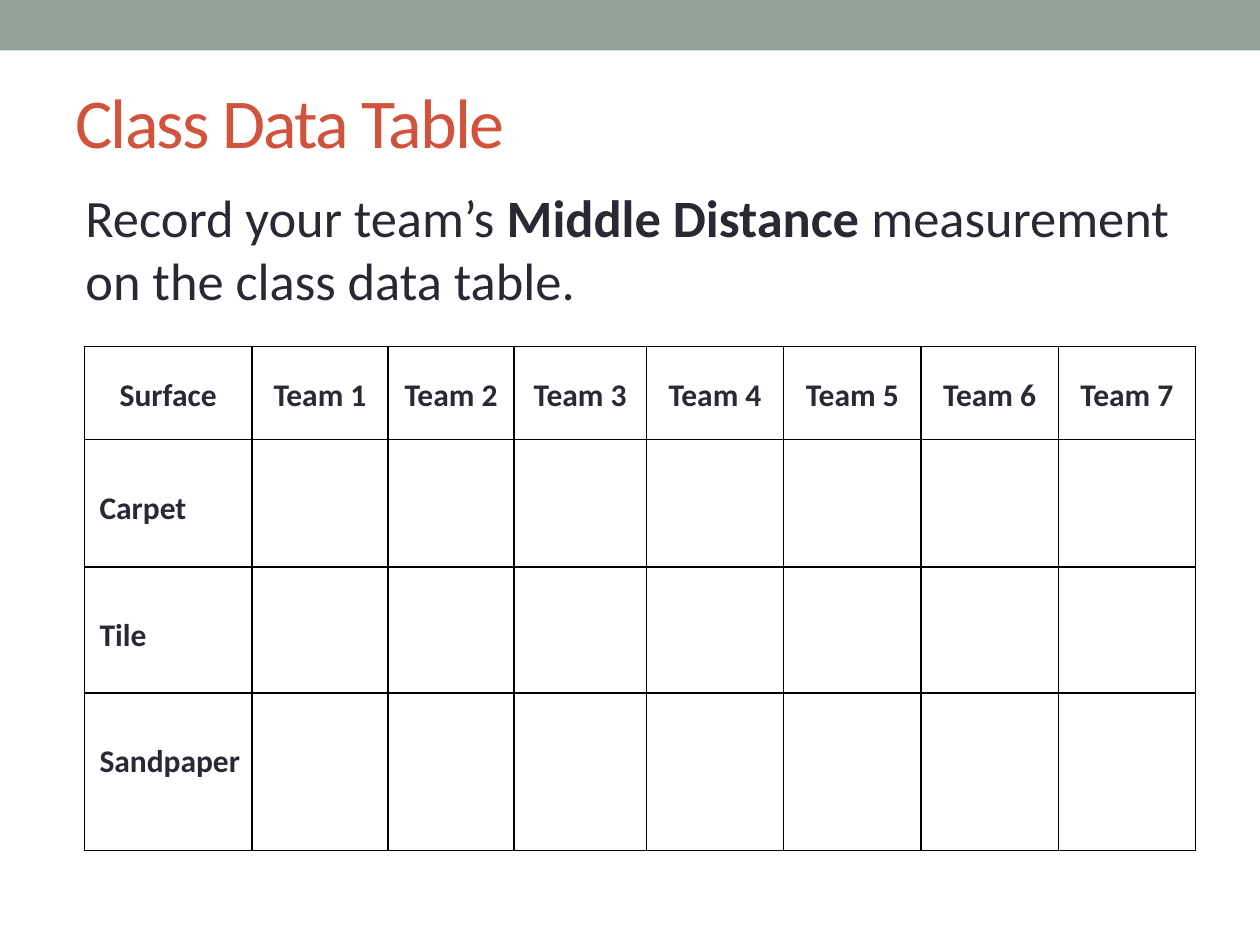
import pptx
import pptx.util
import pptx.dml.color
import pptx.enum.shapes
import pptx.enum.text
import pptx.oxml
import pptx.oxml.ns

Inches = pptx.util.Inches
Pt = pptx.util.Pt
RGBColor = pptx.dml.color.RGBColor
Anchor = pptx.enum.text.MSO_ANCHOR
Align = pptx.enum.text.PP_ALIGN

SAGE = RGBColor(0x93, 0xA2, 0x99)
RUST = RGBColor(0xD2, 0x53, 0x3C)
INK = RGBColor(0x29, 0x29, 0x34)
BLACK = RGBColor(0, 0, 0)


class Deck:
    font = "Calibri"

    def __init__(self, slide):
        self.slide = slide

    def style(self, para, size, color, bold=None):
        para.font.name = self.font
        para.font.size = Pt(size)
        para.font.color.rgb = color
        para.font.bold = bold

    def band(self, left, top, width, height, color):
        shape = self.slide.shapes.add_shape(
            pptx.enum.shapes.MSO_SHAPE.RECTANGLE,
            Inches(left), Inches(top), Inches(width), Inches(height))
        shape.shadow.inherit = False
        shape.fill.solid()
        shape.fill.fore_color.rgb = color
        shape.line.fill.background()

    def text(self, left, top, width, height, parts, size, color,
             anchor=Anchor.TOP, track=0):
        """Add one paragraph of (words, bold) parts; track is in points."""
        box = self.slide.shapes.add_textbox(
            Inches(left), Inches(top), Inches(width), Inches(height))
        frame = box.text_frame
        frame.word_wrap = True
        frame.vertical_anchor = anchor
        para = frame.paragraphs[0]
        self.style(para, size, color)
        for words, bold in parts:
            run = para.add_run()
            run.text = words
            if bold:
                run.font.bold = True
            if track:
                run.font._element.set("spc", str(track * 100))

    def border(self, cell, color, width):
        props = cell._tc.get_or_add_tcPr()
        for spot, side in enumerate("LRTB"):
            line = pptx.oxml.parse_xml(
                f'<a:ln{side} {pptx.oxml.ns.nsdecls("a")} w="{Pt(width)}">'
                f'<a:solidFill><a:srgbClr val="{color}"/></a:solidFill>'
                f'</a:ln{side}>')
            props.insert(spot, line)

    def label(self, cell, words, head):
        """Fill a heading cell (centred) or a row label (one line down)."""
        cell.text = words
        cell.margin_top = Inches(0 if head else 0.35)
        cell.margin_left = Inches(0.07 if head else 0.12)
        cell.vertical_anchor = Anchor.MIDDLE if head else Anchor.TOP
        para = cell.text_frame.paragraphs[0]
        para.alignment = Align.CENTER if head else Align.LEFT
        para.line_spacing = 1.15
        self.style(para, 18, INK, True)

    def table(self, left, top, widths, heights, heads, names):
        grid = self.slide.shapes.add_table(
            len(heights), len(widths), Inches(left), Inches(top),
            Inches(sum(widths)), Inches(sum(heights))).table
        grid.first_row = grid.horz_banding = False
        for col, width in zip(grid.columns, widths):
            col.width = Inches(width)
        for row, height in zip(grid.rows, heights):
            row.height = Inches(height)
        for cell in grid.iter_cells():
            cell.fill.background()
            cell.margin_left = cell.margin_right = Inches(0.07)
            cell.margin_top = cell.margin_bottom = 0
            self.border(cell, BLACK, 1)
        for col, words in enumerate(heads):
            self.label(grid.cell(0, col), words, True)
        for row, words in enumerate(names, 1):
            self.label(grid.cell(row, 0), words, False)


def main():
    show = pptx.Presentation()
    show.slide_width, show.slide_height = Inches(10), Inches(7.5)
    deck = Deck(show.slides.add_slide(show.slide_layouts[6]))

    deck.band(0, 0, 10, 0.4, SAGE)
    deck.text(0.5, 0.42, 9, 1.08, [("Class Data Table", False)], 40, RUST,
              Anchor.MIDDLE, -1)
    deck.table(0.67, 2.75, [1.33, 1.08, 1, 1.05] + [1.09] * 4,
               [0.74, 1.01, 1, 1.25],
               ["Surface"] + [f"Team {n}" for n in range(1, 8)],
               ["Carpet", "Tile", "Sandpaper"])
    deck.text(0.58, 1.42, 8.83, 1.11,
              [("Record your team’s ", False), ("Middle Distance", True),
               (" measurement on the class data table.", False)], 30, INK)
    show.save("out.pptx")


if __name__ == "__main__":
    main()
